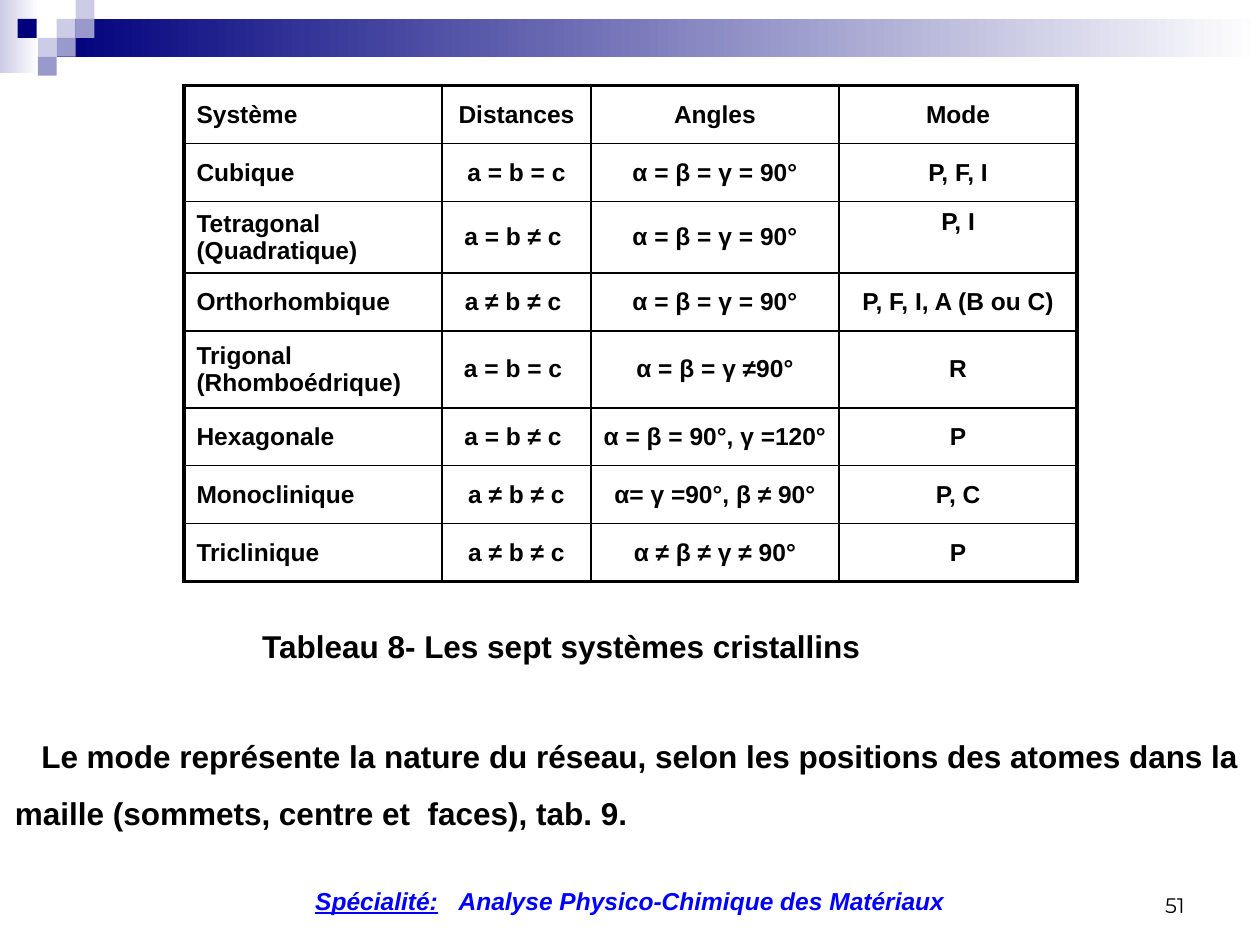
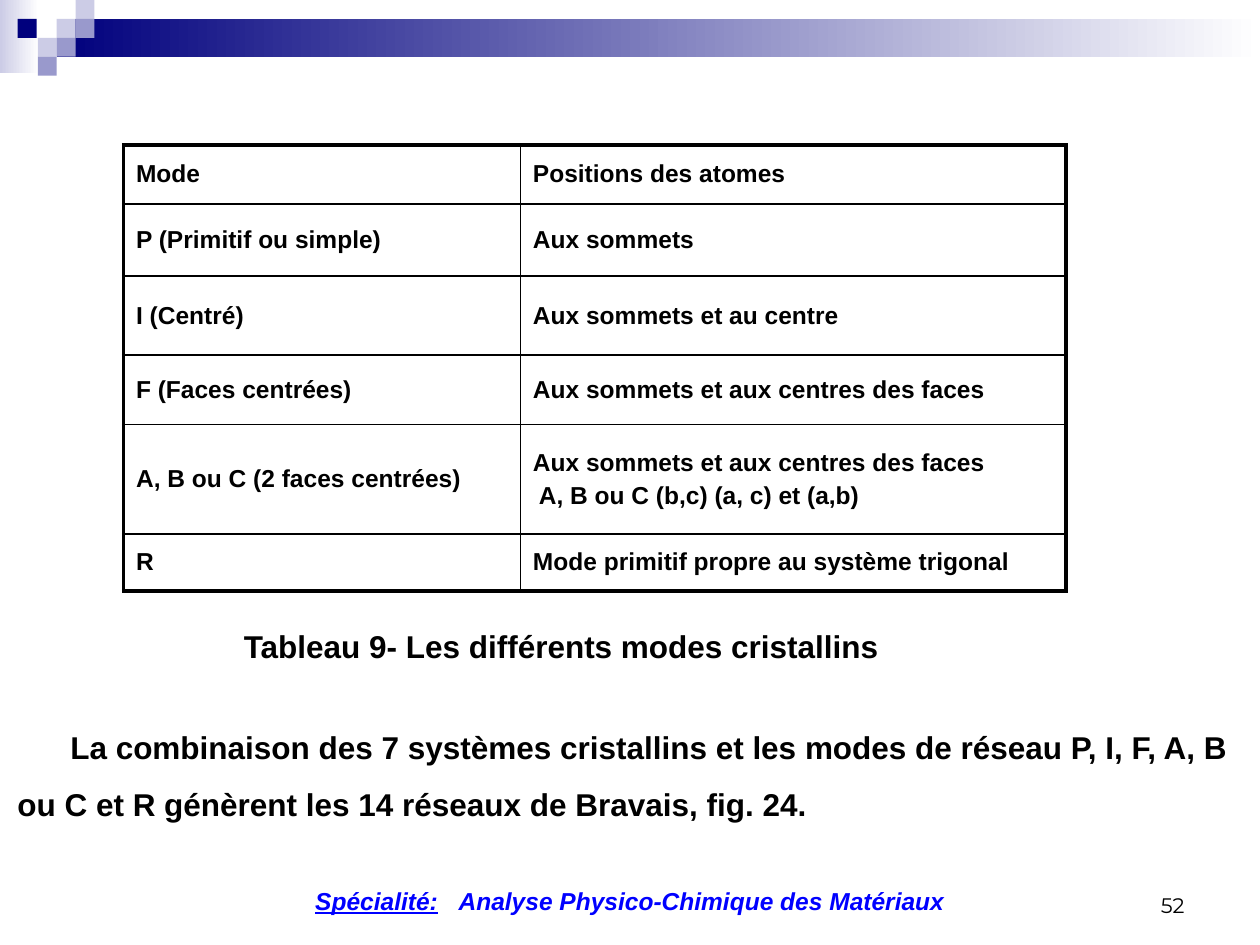
"""Build two slides on the seven crystal systems and the lattice modes."""
from dataclasses import dataclass

from lxml.etree import SubElement
from pptx import Presentation
from pptx.dml.color import RGBColor as Rgb
from pptx.enum.shapes import MSO_SHAPE as Shape
from pptx.enum.text import MSO_ANCHOR as Anchor, PP_ALIGN as Align
from pptx.oxml.ns import qn
from pptx.util import Inches, Pt


@dataclass(frozen=True)
class Theme:
    navy: str = "00007D"
    violet: str = "9999CC"
    lilac: str = "CCCCE6"
    white: str = "FFFFFF"
    black: str = "000000"
    blue: str = "0000FF"
    font: str = "Arial"
    number_font: str = "Montserrat"
    body: int = 18
    small: int = 14
    number: int = 12
    outer_line: float = 2.25
    inner_line: float = 1


theme = Theme()


def add_span(para, text, size=theme.small, color=theme.black, font=theme.font, bold=True):
    span = para.add_run()
    span.text = text
    span.font.size = Pt(size)
    span.font.name = font
    span.font.bold = bold
    span.font.color.rgb = Rgb.from_string(color)
    return span


def add_box(page, left, top, width, height, align=Align.LEFT):
    frame = page.shapes.add_textbox(*map(Inches, (left, top, width, height))).text_frame
    frame.word_wrap = True
    frame.paragraphs[0].alignment = align
    return frame


gradients = [
    (0, 0, 0.31, 0.58, theme.lilac),
    (0.45, 0.15, 9.55, 0.3, theme.navy),
]
squares = [
    (0.45, 0.15, theme.lilac),
    (0.6, 0, theme.lilac),
    (0.6, 0.15, theme.violet),
    (0.3, 0.3, theme.lilac),
    (0.14, 0.15, theme.navy),
    (0.45, 0.3, theme.violet),
    (0.3, 0.45, theme.violet),
]
right_angles = "α = β = γ = 90°"
lessons = [
    {
        "number": "51",
        "origin": (1.46, 0.68),
        "columns": [2.05, 1.18, 1.97, 1.89],
        "heights": [0.46, 0.46, 0.54, 0.46, 0.61, 0.46, 0.46, 0.46],
        "rows": [
            ("Système", "Distances", "Angles", "Mode"),
            ("Cubique", "a = b = c", right_angles, "P, F, I"),
            ("Tetragonal (Quadratique)", "a = b ≠ c ", right_angles, "P, I"),
            ("Orthorhombique", "a ≠ b ≠ c ", right_angles, "P, F, I, A (B ou C)"),
            ("Trigonal (Rhomboédrique)", "a = b = c ", "α = β = γ ≠90°", "R"),
            ("Hexagonale", "a = b ≠ c ", "α = β = 90°, γ =120°", "P"),
            ("Monoclinique", "a ≠ b ≠ c", "α= γ =90°, β ≠ 90°", "P, C"),
            ("Triclinique", "a ≠ b ≠ c", "α ≠ β ≠ γ ≠ 90°", "P"),
        ],
        "align": Align.CENTER,
        "top_cell": (2, 3),
        "space_before": 0,
        "caption": "Tableau 8- Les sept systèmes cristallins",
        "body_at": (0.02, 5.65),
        "indent": 0.21,
        "body": "Le mode représente la nature du réseau, selon les positions des atomes "
                "dans la maille (sommets, centre et  faces), tab. 9.",
    },
    {
        "number": "52",
        "origin": (0.98, 1.15),
        "columns": [3.15, 4.33],
        "heights": [0.47, 0.57, 0.63, 0.55, 0.87, 0.45],
        "rows": [
            ("Mode", "Positions des atomes"),
            ("P (Primitif ou simple)", "Aux sommets"),
            ("I (Centré)", "Aux sommets et au centre"),
            ("F (Faces centrées)", "Aux sommets et aux centres des faces"),
            ("A, B ou C (2 faces centrées)",
             "Aux sommets et aux centres des faces\n A, B ou C (b,c) (a, c) et (a,b)"),
            ("R", "Mode primitif propre au système trigonal"),
        ],
        "align": Align.LEFT,
        "top_cell": None,
        "space_before": 3,
        "caption": "Tableau 9- Les différents modes cristallins",
        "body_at": (0.04, 5.58),
        "indent": 0.42,
        "body": "La combinaison des 7 systèmes cristallins et les modes de réseau "
                "P, I, F, A, B ou C et R génèrent les 14 réseaux de Bravais, fig. 24.",
    },
]

deck = Presentation()
deck.slide_width, deck.slide_height = Inches(10), Inches(7.5)

for lesson in lessons:
    page = deck.slides.add_slide(deck.slide_layouts[6])

    for *place, color in gradients:
        band = page.shapes.add_shape(Shape.RECTANGLE, *map(Inches, place))
        band.shadow.inherit = False
        band.line.fill.background()
        band.fill.gradient()
        band.fill.gradient_angle = 0
        for stop, shade in zip(band.fill.gradient_stops, (color, theme.white)):
            stop.color.rgb = Rgb.from_string(shade)

    for left, top, color in squares:
        square = page.shapes.add_shape(Shape.RECTANGLE, *map(Inches, (left, top, 0.15, 0.15)))
        square.shadow.inherit = False
        square.line.fill.background()
        square.fill.solid()
        square.fill.fore_color.rgb = Rgb.from_string(color)

    number = add_box(page, 7.17, 6.83, 2.33, 0.5, Align.RIGHT)
    number.vertical_anchor = Anchor.BOTTOM
    add_span(number.paragraphs[0], lesson["number"], theme.number,
             font=theme.number_font, bold=False)

    rows, columns, heights = lesson["rows"], lesson["columns"], lesson["heights"]
    last_row, last_column = len(rows) - 1, len(columns) - 1
    size = (sum(columns), sum(heights))
    table = page.shapes.add_table(len(rows), len(columns),
                                  *map(Inches, (*lesson["origin"], *size))).table
    table.first_row = table.horz_banding = False
    for column, width in zip(table.columns, columns):
        column.width = Inches(width)
    for row, height in zip(table.rows, heights):
        row.height = Inches(height)

    for r, texts in enumerate(rows):
        for c, text in enumerate(texts):
            cell = table.cell(r, c)
            cell.vertical_anchor = Anchor.TOP if (r, c) == lesson["top_cell"] else Anchor.MIDDLE
            for index, line_text in enumerate(text.split("\n")):
                frame = cell.text_frame
                para = frame.add_paragraph() if index else frame.paragraphs[0]
                para.alignment = lesson["align"] if c else Align.LEFT
                para.space_before = Pt(lesson["space_before"])
                add_span(para, line_text)
            edges = {"a:lnL": c == 0, "a:lnR": c == last_column,
                     "a:lnT": r == 0, "a:lnB": r == last_row}
            properties = cell._tc.get_or_add_tcPr()
            for tag, is_outer in edges.items():
                weight = theme.outer_line if is_outer else theme.inner_line
                border = SubElement(properties, qn(tag), w=str(Pt(weight)))
                paint = SubElement(border, qn("a:solidFill"))
                SubElement(paint, qn("a:srgbClr"), val=theme.black)
            cell.fill.background()

    caption = add_box(page, 0.32, 4.93, 8.27, 0.4, Align.CENTER)
    add_span(caption.paragraphs[0], lesson["caption"], theme.body)

    para = add_box(page, *lesson["body_at"], 9.96, 1).paragraphs[0]
    para.line_spacing = 1.5
    para._p.get_or_add_pPr().set("indent", str(Inches(lesson["indent"])))
    add_span(para, lesson["body"], theme.body)

    para = add_box(page, 0.02, 6.98, 9.96, 0.34, Align.CENTER).paragraphs[0]
    label, gap, specialty = [
        add_span(para, text, color=theme.blue)
        for text in ("Spécialité:", " ", "Analyse Physico-Chimique des Matériaux")
    ]
    for span in (label, gap, specialty):
        span.font.italic = True
    label.font.underline = True
    gap._r.get_or_add_rPr().set("spc", "780")

deck.save("out.pptx")
